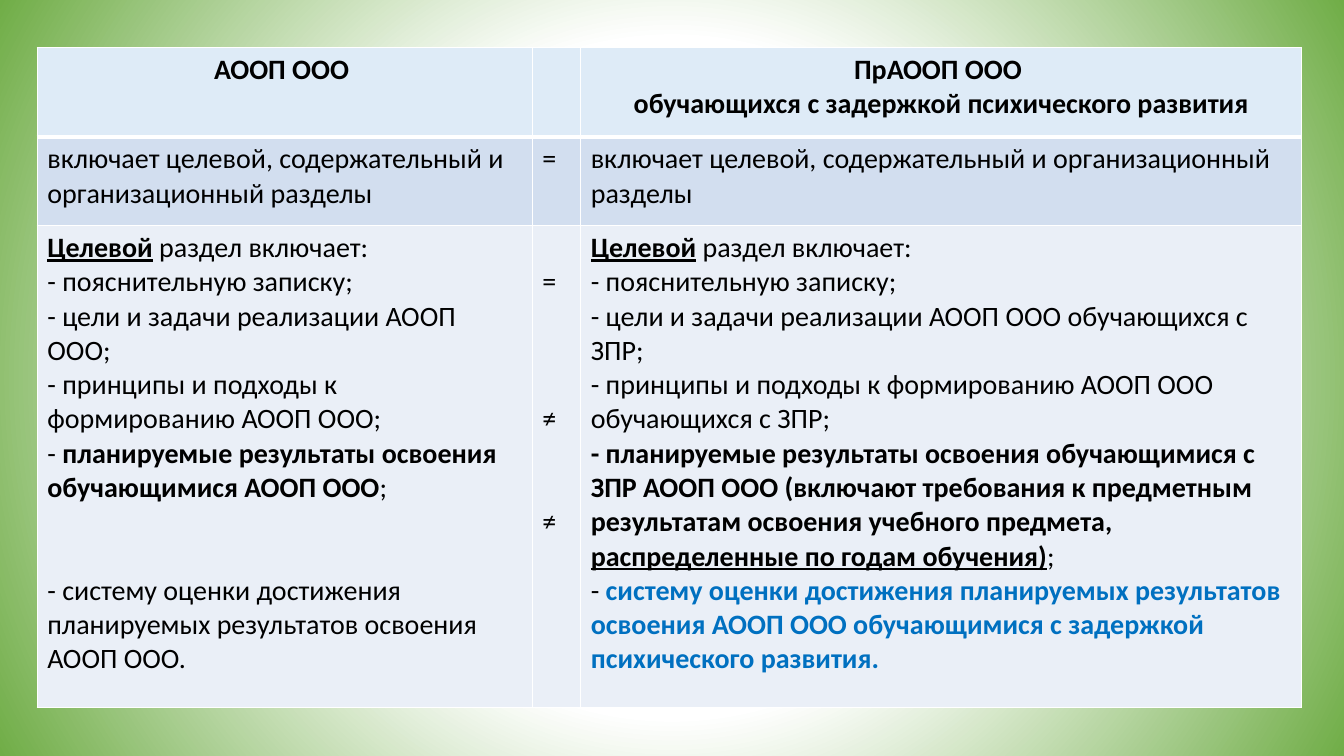
from lxml.etree import SubElement
from pptx import Presentation
from pptx.dml.color import RGBColor
from pptx.enum.text import PP_ALIGN
from pptx.oxml import parse_xml
from pptx.oxml.ns import nsdecls, qn
from pptx.util import Inches, Pt

BLACK = RGBColor(0x00, 0x00, 0x00)
BLUE = RGBColor(0x00, 0x70, 0xC0)
WHITE = RGBColor(0xFF, 0xFF, 0xFF)
GREEN = RGBColor(0x70, 0xAD, 0x47)
ROW_FILLS = [RGBColor(0xDE, 0xEB, 0xF7), RGBColor(0xD2, 0xDE, 0xEF), RGBColor(0xEA, 0xEF, 0xF7)]
COLUMN_WIDTHS = [4.91, 0.48, 7.15]
ROW_HEIGHTS = [0.89, 0.88, 4.78]
LINE = 24.4  # height of one text line, points

# Each paragraph: lines of space above, then (text, style) spans;
# style letters: b bold, u underlined, c coloured
SECTIONS = "включает целевой, содержательный и организационный разделы"
GOAL = (0, [("Целевой", "bu"), (" раздел включает:", "")])
NOTE = (0, [("- пояснительную записку;", "")])
ROWS = [
    [
        [(0, [("АООП ООО ", "b")])],
        [],
        [(0, [("ПрАООП ООО ", "b")]),
         (0, [("обучающихся с задержкой психического развития", "b")])],
    ],
    [[(0, [(SECTIONS, "")])], [(0, [("=", "")])], [(0, [(SECTIONS, "")])]],
    [
        [GOAL, NOTE,
         (0, [("- цели и задачи реализации АООП ООО;", "")]),
         (0, [("- принципы и подходы к формированию АООП ООО;", "")]),
         (0, [("- ", ""),
              ("планируемые результаты освоения обучающимися АООП ООО", "b"),
              (";", "")]),
         (2, [("- систему оценки достижения планируемых результатов "
               "освоения АООП ООО.", "")])],
        [(0, [("=", "")]), (3, [("≠", "")]), (2, [("≠", "")])],
        [GOAL, NOTE,
         (0, [("- цели и задачи реализации АООП ООО обучающихся с ЗПР;", "")]),
         (0, [("- принципы и подходы к формированию АООП ООО обучающихся с ЗПР;", "")]),
         (0, [("- планируемые результаты освоения обучающимися с ЗПР АООП ООО "
               "(включают требования к предметным результатам освоения "
               "учебного предмета, ", "b"),
              ("распределенные по годам обучения)", "bu"),
              (";", "")]),
         (0, [("- ", ""),
              ("систему оценки достижения планируемых результатов освоения "
               "АООП ООО обучающимися с задержкой психического развития.", "bc")])],
    ],
]


def set_borders(cell, top, bottom):
    """Draw white borders; top and bottom widths are in points."""
    properties = cell._tc.get_or_add_tcPr()
    for index, (side, width) in enumerate([("L", 1), ("R", 1), ("T", top), ("B", bottom)]):
        line = parse_xml(f'<a:ln{side} {nsdecls("a")} w="{Pt(width)}"/>')
        fill = SubElement(line, qn("a:solidFill"))
        SubElement(fill, qn("a:srgbClr"), val=str(WHITE))
        properties.insert(index, line)


def fill_cell(cell, paragraphs):
    """Write the paragraphs with their styled spans."""
    frame = cell.text_frame
    for index, (gap, spans) in enumerate(paragraphs):
        para = frame.add_paragraph() if index else frame.paragraphs[0]
        para.font.size = Pt(20)
        para.font.name = "Calibri"
        para.space_before = Pt(gap * LINE)
        for text, style in spans:
            span = para.add_run()
            span.text = text
            span.font.size = Pt(20)
            span.font.name = "Calibri"
            span.font.bold = "b" in style
            span.font.underline = "u" in style
            span.font.color.rgb = BLUE if "c" in style else BLACK


deck = Presentation()
deck.slide_width = Inches(13.33)
deck.slide_height = Inches(7.5)
page = deck.slides.add_slide(deck.slide_layouts[6])

# Background: white centre fading to green corners
backdrop = page.background.fill
backdrop.gradient()
gradient = page.background._cSld.bg.bgPr.find(qn("a:gradFill"))
for child in list(gradient):
    gradient.remove(child)
stops = SubElement(gradient, qn("a:gsLst"))
for percent, color in [(0, WHITE), (44, WHITE), (100, GREEN)]:
    stop = SubElement(stops, qn("a:gs"), pos=str(percent * 1000))
    SubElement(stop, qn("a:srgbClr"), val=str(color))
circle = SubElement(gradient, qn("a:path"), {"path": "circle"})
SubElement(circle, qn("a:fillToRect"), dict.fromkeys("ltrb", "50000"))

# Comparison table
table = page.shapes.add_table(3, 3, Inches(0.37), Inches(0.47),
                              Inches(12.53), Inches(6.56)).table
table.first_row = False
table.horz_banding = False
for column, width in zip(table.columns, COLUMN_WIDTHS):
    column.width = Inches(width)
for row, height in zip(table.rows, ROW_HEIGHTS):
    row.height = Inches(height)

for row_index, contents in enumerate(ROWS):
    for column_index, paragraphs in enumerate(contents):
        cell = table.cell(row_index, column_index)
        cell.fill.solid()
        cell.fill.fore_color.rgb = ROW_FILLS[row_index]
        set_borders(cell, 3 if row_index == 1 else 1, 3 if row_index == 0 else 1)
        fill_cell(cell, paragraphs)

# Header is centred; the signs start level with the second line
for cell in table.rows[0].cells:
    for para in cell.text_frame.paragraphs:
        para.alignment = PP_ALIGN.CENTER
table.cell(2, 1).margin_top = Inches(0.05) + Pt(LINE)

deck.save("out.pptx")
